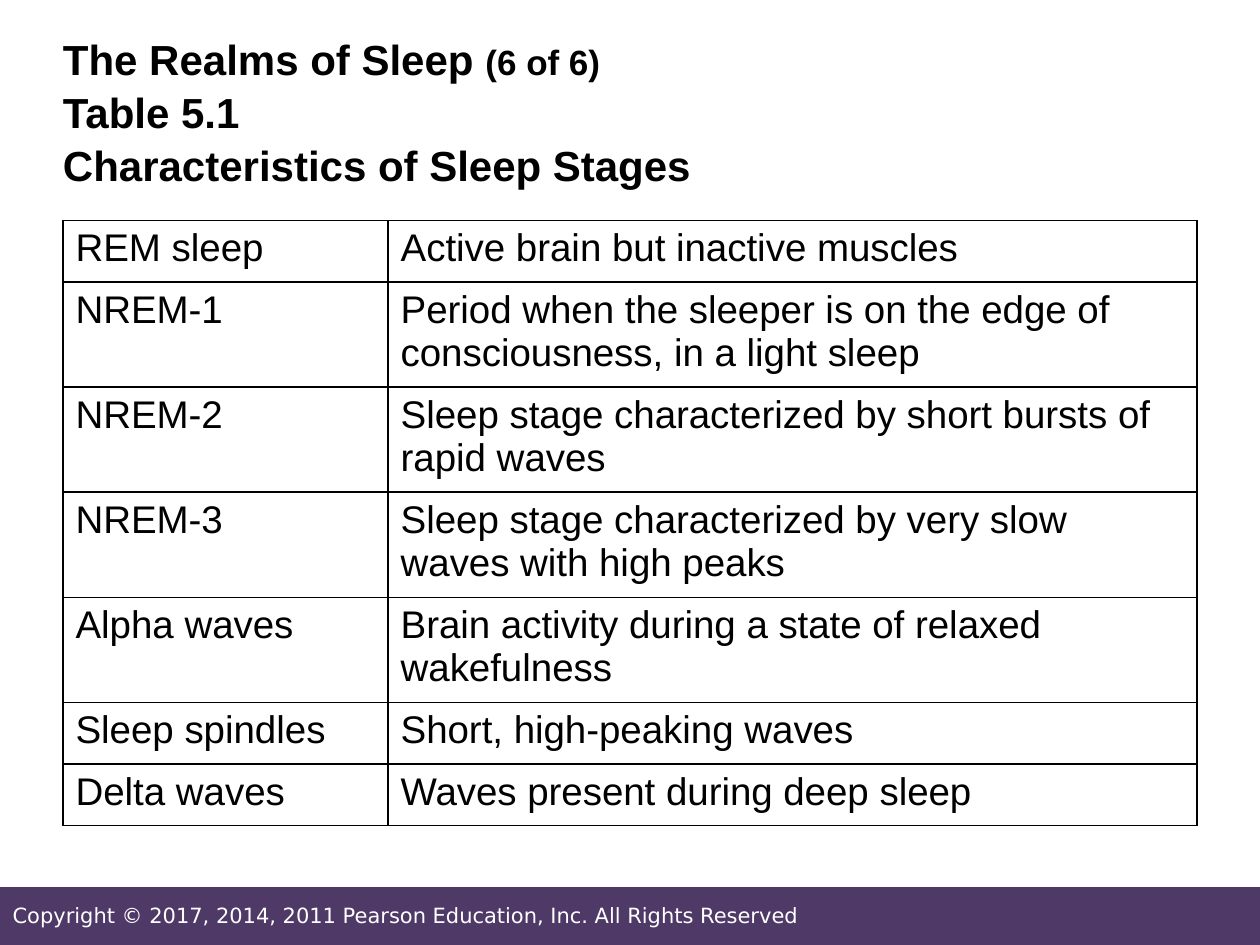
from lxml import etree
from pptx import Presentation
from pptx.dml.color import RGBColor
from pptx.enum.shapes import MSO_SHAPE
from pptx.enum.text import MSO_ANCHOR
from pptx.oxml.ns import qn
from pptx.util import Inches, Pt

RECTANGLE = MSO_SHAPE.RECTANGLE
TOP, MIDDLE = MSO_ANCHOR.TOP, MSO_ANCHOR.MIDDLE
WIDTH, HEIGHT = 10, 7.5
BLACK, WHITE, PURPLE = "000000", "FFFFFF", "4F3967"

STAGES = [
    ("REM sleep", "Active brain but inactive muscles"),
    ("NREM-1", "Period when the sleeper is on the edge of consciousness, in a light sleep"),
    ("NREM-2", "Sleep stage characterized by short bursts of rapid waves"),
    ("NREM-3", "Sleep stage characterized by very slow waves with high peaks"),
    ("Alpha waves", "Brain activity during a state of relaxed wakefulness"),
    ("Sleep spindles", "Short, high-peaking waves"),
    ("Delta waves", "Waves present during deep sleep"),
]
TITLE_LINES = [
    [("The Realms of Sleep ", 24), ("(6 of 6) ", 20)],
    [("Table 5.1", 24)],
    [("Characteristics of Sleep Stages", 24)],
]
COPYRIGHT = "Copyright © 2017, 2014, 2011 Pearson Education, Inc. All Rights Reserved"


def color(value):
    return RGBColor.from_string(value)


class SlideBuilder:
    """Draws on one page; x and y count tenths of an inch on a 100 by 75 grid."""

    unit = Inches(0.1)

    def __init__(self, deck):
        self.page = deck.slides.add_slide(deck.slide_layouts[6])

    def area(self, *cells):
        return [round(cell * self.unit) for cell in cells]

    def span(self, para, text, size, font="Arial", ink=BLACK, bold=False):
        run = para.add_run()
        run.text = text
        run.font.name, run.font.size, run.font.bold = font, Pt(size), bold
        run.font.color.rgb = color(ink)

    def band(self, x, y, width, height, fill):
        shape = self.page.shapes.add_shape(RECTANGLE, *self.area(x, y, width, height))
        shape.shadow.inherit = False
        shape.fill.solid()
        shape.fill.fore_color.rgb = color(fill)
        shape.line.fill.background()

    def text(self, x, y, width, height, lines, anchor=TOP, spacing=1.0, **style):
        """Sets lines of (text, size) spans in one paragraph with line breaks."""
        box = self.page.shapes.add_textbox(*self.area(x, y, width, height))
        frame = box.text_frame
        frame.word_wrap = True
        frame.vertical_anchor = anchor
        frame.margin_left = frame.margin_right = 0
        frame.margin_top = frame.margin_bottom = 0
        para = frame.paragraphs[0]
        para.line_spacing = spacing
        for index, line in enumerate(lines):
            if index:
                para.add_line_break()
            for words, size in line:
                self.span(para, words, size, **style)

    def border(self, cell):
        properties = cell._tc.get_or_add_tcPr()
        for index, side in enumerate(("lnL", "lnR", "lnT", "lnB")):
            line = etree.Element(qn(f"a:{side}"), w=str(Pt(1)))
            fill = etree.SubElement(line, qn("a:solidFill"))
            etree.SubElement(fill, qn("a:srgbClr"), val=BLACK)
            properties.insert(index, line)

    def table(self, x, y, widths, row_height, rows, size):
        place = self.area(x, y, sum(widths), row_height * len(rows))
        table = self.page.shapes.add_table(len(rows), len(widths), *place).table
        table.first_row = table.horz_banding = False
        for column, width in zip(table.columns, self.area(*widths)):
            column.width = width
        for row, texts in zip(table.rows, rows):
            for cell, words in zip(row.cells, texts):
                cell.fill.background()
                self.border(cell)
                self.span(cell.text_frame.paragraphs[0], words, size)


def main():
    deck = Presentation()
    deck.slide_width, deck.slide_height = Inches(WIDTH), Inches(HEIGHT)
    slide = SlideBuilder(deck)
    slide.band(-0.1, 70.4, 100.2, 4.7, PURPLE)
    slide.text(1, 70.1, 69.1, 5, [[(COPYRIGHT, 12)]], anchor=MIDDLE,
               font="DejaVu Sans", ink=WHITE)
    slide.text(5, 2.5, 90, 11.7, TITLE_LINES, spacing=1.05, bold=True)
    slide.table(5, 17.5, (25.8, 64.2), 4.9, STAGES, 22)
    deck.save("out.pptx")


if __name__ == "__main__":
    main()
